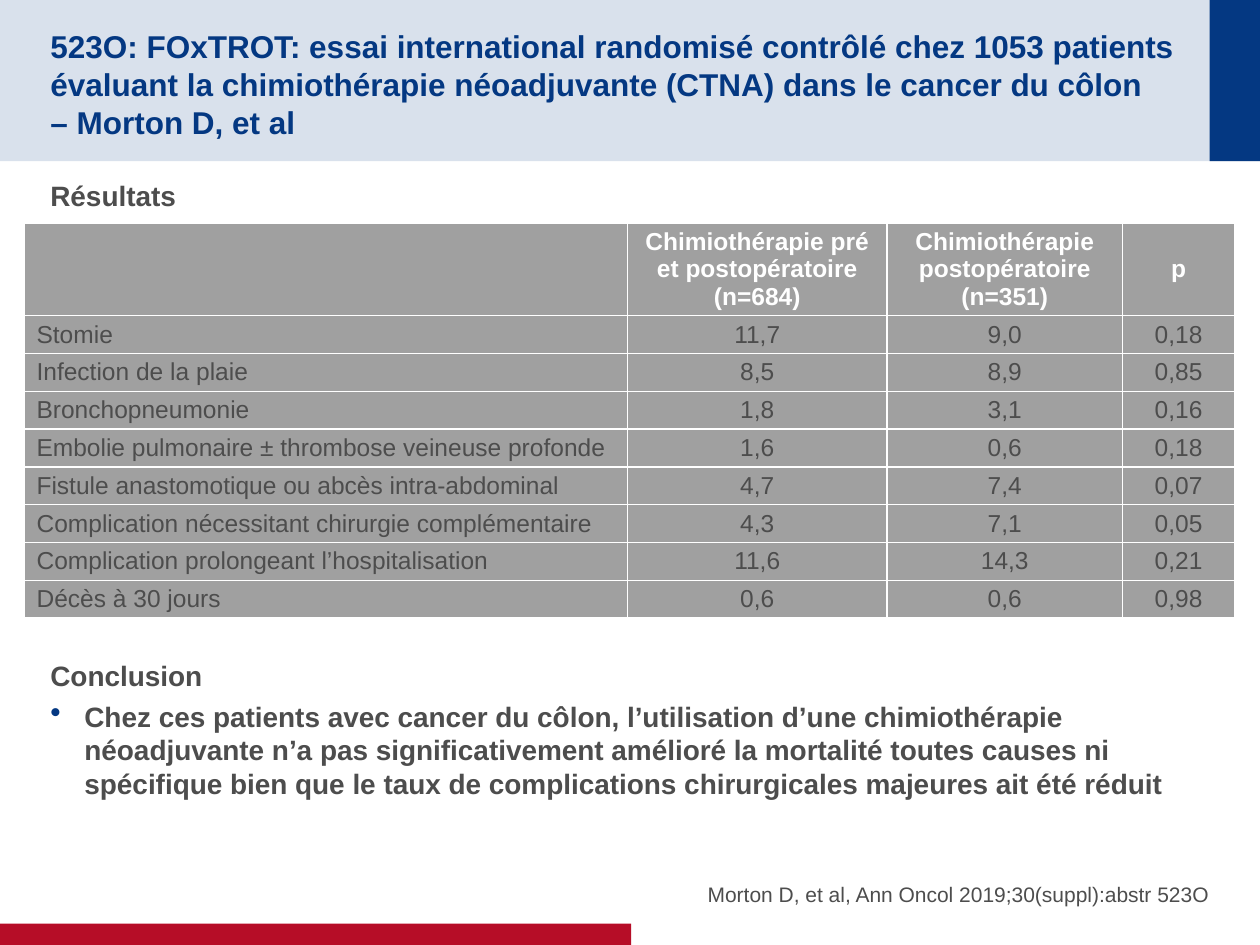
"""Build the FOxTROT results slide: banner, complications table and conclusion."""
from lxml.etree import SubElement
from pptx import Presentation
from pptx.dml.color import RGBColor as RGB
from pptx.enum.shapes import MSO_SHAPE as Shape
from pptx.enum.text import MSO_ANCHOR as Anchor, MSO_AUTO_SIZE as AutoSize, PP_ALIGN as Align
from pptx.oxml import parse_xml
from pptx.oxml.ns import nsdecls, qn
from pptx.util import Inches, Pt

TITLE = ("523O: FOxTROT: essai international randomisé contrôlé chez 1053 patients "
         "évaluant la chimiothérapie néoadjuvante (CTNA) dans le cancer du côlon \v– Morton D, et al")
RESULTS, CONCLUSION = "Résultats", "Conclusion"
FINDING = ("Chez ces patients avec cancer du côlon, l’utilisation d’une chimiothérapie "
           "néoadjuvante n’a pas significativement amélioré la mortalité toutes causes ni "
           "spécifique bien que le taux de complications chirurgicales majeures ait été réduit")
SOURCE = "Morton D, et al, Ann Oncol 2019;30(suppl):abstr 523O"
ROWS = [
    ("", "Chimiothérapie pré et postopératoire (n=684)", "Chimiothérapie postopératoire (n=351)", "p"),
    ("Stomie", "11,7", "9,0", "0,18"),
    ("Infection de la plaie", "8,5", "8,9", "0,85"),
    ("Bronchopneumonie", "1,8", "3,1", "0,16"),
    ("Embolie pulmonaire ± thrombose veineuse profonde", "1,6", "0,6", "0,18"),
    ("Fistule anastomotique ou abcès intra-abdominal", "4,7", "7,4", "0,07"),
    ("Complication nécessitant chirurgie complémentaire", "4,3", "7,1", "0,05"),
    ("Complication prolongeant l’hospitalisation", "11,6", "14,3", "0,21"),
    ("Décès à 30 jours", "0,6", "0,6", "0,98"),
]
COLUMN_WIDTHS = (4.79, 2.06, 1.87, 0.89)
HEADER_HEIGHT, ROW_HEIGHT = 0.73, 0.3
THEME = {"font": "Arial", "navy": "043882", "red": "B60D27", "grey": "4D4D4D", "table": "A0A0A0",
         "white": "FFFFFF", "title": 18, "body": 16, "cell": 14, "source": 12}
BANDS = [((0, 0, 10, 1.28), "navy", 15), ((9.6, 0, 0.4, 1.28), "navy", 100),
         ((0, 7.33, 5.01, 0.17), "red", 100)]


def place(item, area):
    for name, value in zip(("left", "top", "width", "height"), area):
        setattr(item, name, Inches(value))


def paint(fill, color, opacity=100):
    fill.solid()
    fill.fore_color.rgb = RGB.from_string(THEME[color])
    if opacity < 100:
        SubElement(fill._xPr.find(f".//{qn('a:srgbClr')}"), qn("a:alpha"), val=str(opacity * 1000))


def write(para, text, size, color, bold=False, **layout):
    para.text = text
    for name, value in layout.items():
        setattr(para, name, value)
    for span in para.runs:
        style = {"name": THEME["font"], "size": Pt(THEME[size]), "bold": bold}
        for name, value in style.items():
            setattr(span.font, name, value)
        span.font.color.rgb = RGB.from_string(THEME[color])


def set_frame(frame, anchor, margins):
    names = ("margin_left", "margin_top", "margin_right", "margin_bottom")
    options = dict(zip(names, map(Inches, margins)), vertical_anchor=anchor,
                   word_wrap=True, auto_size=AutoSize.NONE)
    for name, value in options.items():
        setattr(frame, name, value)


def add_bullet(para):
    props = para._p.get_or_add_pPr()
    props.set("marL", str(Inches(0.27)))
    props.set("indent", str(Inches(-0.27)))
    color = SubElement(props, qn("a:buClr"))
    SubElement(color, qn("a:srgbClr"), val=THEME["navy"])
    SubElement(props, qn("a:buSzPct"), val="110000")
    SubElement(props, qn("a:buChar"), char="•")


def add_bands(slide):
    for area, color, opacity in BANDS:
        band = slide.shapes.add_shape(Shape.RECTANGLE, *map(Inches, area))
        band.shadow.inherit = False
        band.line.fill.background()
        paint(band.fill, color, opacity)


def add_title(slide):
    title = slide.shapes.title
    slide.shapes._spTree.append(title._element)
    place(title, (0.4, 0.2, 9.13, 0.88))
    set_frame(title.text_frame, Anchor.MIDDLE, (0, 0.05, 0, 0))
    write(title.text_frame.paragraphs[0], TITLE, "title", "navy", True, alignment=Align.LEFT)


def add_body(slide):
    frame = slide.shapes.add_textbox(*map(Inches, (0.4, 1.37, 9.2, 5.19))).text_frame
    set_frame(frame, Anchor.TOP, (0, 0.05, 0, 0.05))
    for index, (text, before) in enumerate([(RESULTS, 0), (CONCLUSION, 251), (FINDING, 0)]):
        para = frame.add_paragraph() if index else frame.paragraphs[0]
        write(para, text, "body", "grey", True, space_before=Pt(before), space_after=Pt(4))
    add_bullet(para)


def add_source(slide):
    frame = slide.shapes.add_textbox(*map(Inches, (5.08, 6.67, 4.52, 0.53))).text_frame
    set_frame(frame, Anchor.BOTTOM, (0, 0, 0, 0))
    write(frame.paragraphs[0], SOURCE, "source", "grey", alignment=Align.RIGHT, space_after=Pt(4))


def fill_cell(cell, text, row, column):
    header = row == 0
    margins = {"margin_left": 0.1, "margin_right": 0.1, "margin_top": 0.04, "margin_bottom": 0.04}
    for name, value in margins.items():
        setattr(cell, name, Inches(value))
    cell.vertical_anchor = Anchor.MIDDLE
    write(cell.text_frame.paragraphs[0], text, "cell", "white" if header else "grey", header,
          alignment=Align.CENTER if column else Align.LEFT)
    props = cell._tc.get_or_add_tcPr()
    for side in ("lnT", "lnB"):
        props.append(parse_xml(
            f'<a:{side} {nsdecls("a")} w="12700"><a:solidFill><a:srgbClr val="{THEME["white"]}"/>'
            f'</a:solidFill></a:{side}>'))
    paint(cell.fill, "table", 100 if header else 25 if row % 2 else 10)


def add_results(slide):
    heights = [HEADER_HEIGHT] + [ROW_HEIGHT] * (len(ROWS) - 1)
    area = (0.19, 1.77, sum(COLUMN_WIDTHS), sum(heights))
    table = slide.shapes.add_table(len(ROWS), len(COLUMN_WIDTHS), *map(Inches, area)).table
    for column, width in zip(table.columns, COLUMN_WIDTHS):
        column.width = Inches(width)
    for row, height in zip(table.rows, heights):
        row.height = Inches(height)
    for row, texts in enumerate(ROWS):
        for column, text in enumerate(texts):
            fill_cell(table.cell(row, column), text, row, column)


def main():
    deck = Presentation()
    deck.slide_width, deck.slide_height = Inches(10), Inches(7.5)
    slide = deck.slides.add_slide(deck.slide_layouts[5])
    for build in (add_bands, add_title, add_body, add_source, add_results):
        build(slide)
    deck.save("out.pptx")


if __name__ == "__main__":
    main()
